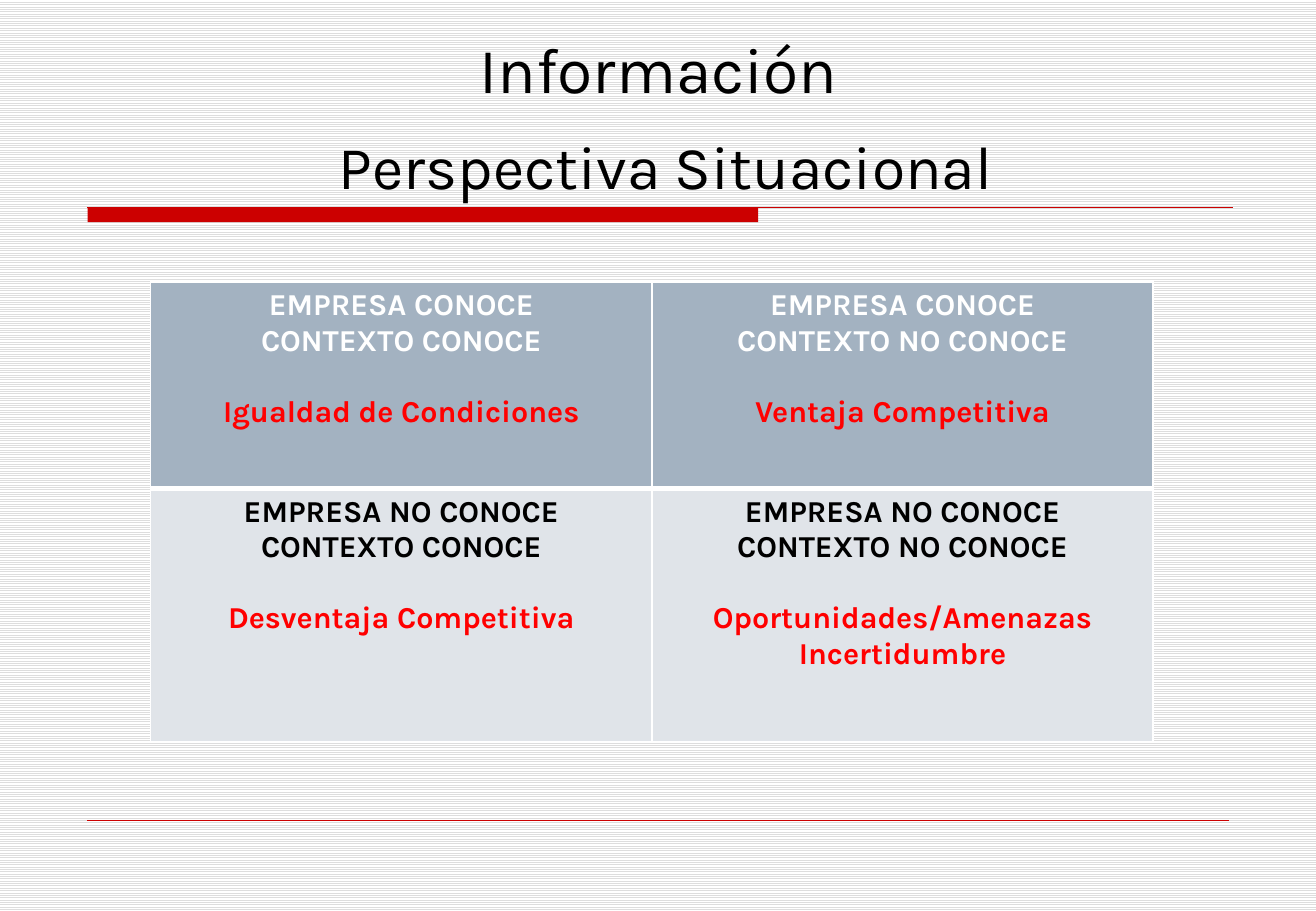
from lxml import etree
from pptx import Presentation
from pptx.dml.color import RGBColor
from pptx.enum import dml, shapes, text
from pptx.oxml import ns
from pptx.util import Inches, Pt

COLORS = {
    "red": "CC0000", "accent": "FF0000", "black": "000000", "white": "FFFFFF",
    "stripe": "DDDDDD", "header": "A3B2C1", "body": "E0E4E9",
}
FONT = "Karla"
QUADRANTS = [
    [(["EMPRESA CONOCE", "CONTEXTO CONOCE"], ["Igualdad de Condiciones"]),
     (["EMPRESA CONOCE", "CONTEXTO NO CONOCE"], ["Ventaja Competitiva"])],
    [(["EMPRESA NO CONOCE", "CONTEXTO CONOCE"], ["Desventaja Competitiva"]),
     (["EMPRESA NO CONOCE", "CONTEXTO NO CONOCE"],
      ["Oportunidades/Amenazas", "Incertidumbre"])],
]
ROW_STYLES = [("header", "white"), ("body", "black")]
ROW_HEIGHTS = [1.7, 2.09]


def rgb(name):
    return RGBColor.from_string(COLORS[name])


def write(frame, content, size, color="black", bold=False, space_before=0):
    """Fill the first empty paragraph of the frame, or append a new one."""
    paragraph = frame.paragraphs[-1]
    if paragraph.runs:
        paragraph = frame.add_paragraph()
    paragraph.alignment = text.PP_ALIGN.CENTER
    paragraph.space_before = Pt(space_before)
    run = paragraph.add_run()
    run.text = content
    run.font.name, run.font.size, run.font.bold = FONT, Pt(size), bold
    run.font.color.rgb = rgb(color)


def add_heading(slide, content, left, top, width, height, size):
    box = slide.shapes.add_textbox(*map(Inches, (left, top, width, height)))
    frame = box.text_frame
    frame.word_wrap = True
    frame.vertical_anchor = text.MSO_ANCHOR.MIDDLE
    write(frame, content, size)


def add_rule(slide, left, top, width, weight):
    line = slide.shapes.add_connector(
        shapes.MSO_CONNECTOR.STRAIGHT, Inches(left), Inches(top),
        Inches(left + width), Inches(top))
    line.line.color.rgb = rgb("red")
    line.line.width = Pt(weight)
    etree.SubElement(line._element.spPr, ns.qn("a:effectLst"))


def add_title_rule(slide, left, top, width, bar_width, bar_height):
    bar = slide.shapes.add_shape(
        shapes.MSO_SHAPE.RECTANGLE,
        *map(Inches, (left, top, bar_width, bar_height)))
    bar.shadow.inherit = False
    bar.fill.solid()
    bar.fill.fore_color.rgb = rgb("red")
    bar.line.fill.background()
    add_rule(slide, left, top, width, 0.75)


def set_borders(cell, widths):
    """Draw white borders, given in points by side: L, R, T, B."""
    properties = cell._tc.get_or_add_tcPr()
    for index, (side, width) in enumerate(widths.items()):
        border = etree.Element(ns.qn(f"a:ln{side}"), w=str(Pt(width)))
        fill = etree.SubElement(border, ns.qn("a:solidFill"))
        etree.SubElement(fill, ns.qn("a:srgbClr"), val=COLORS["white"])
        properties.insert(index, border)


def add_quadrants(slide, left, top, width):
    table = slide.shapes.add_table(
        2, 2, *map(Inches, (left, top, width, sum(ROW_HEIGHTS)))).table
    table.first_row = table.horz_banding = False
    for column in table.columns:
        column.width = Inches(width / 2)
    for row_index, (fill, color) in enumerate(ROW_STYLES):
        table.rows[row_index].height = Inches(ROW_HEIGHTS[row_index])
        for column_index, (conditions, results) in enumerate(QUADRANTS[row_index]):
            cell = table.cell(row_index, column_index)
            cell.fill.solid()
            cell.fill.fore_color.rgb = rgb(fill)
            middle = 3
            set_borders(cell, {"L": 1, "R": 1,
                               "T": middle if row_index == 1 else 1,
                               "B": middle if row_index == 0 else 1})
            for condition in conditions:
                write(cell.text_frame, condition, 18, color, bold=True)
            for index, result in enumerate(results):
                write(cell.text_frame, result, 18, "accent", bold=True,
                      space_before=21 if index == 0 else 0)


def build_slide(presentation):
    slide = presentation.slides.add_slide(presentation.slide_layouts[6])
    background = slide.background.fill
    background.patterned()
    background.pattern = dml.MSO_PATTERN.LIGHT_HORIZONTAL
    background.fore_color.rgb = rgb("stripe")
    background.back_color.rgb = rgb("white")
    add_title_rule(slide, 0.72, 1.71, 9.43, bar_width=5.52, bar_height=0.12)
    add_rule(slide, 0.72, 6.75, 9.39, 0.25)
    add_heading(slide, "Perspectiva Situacional", 1.48, 1.07, 8, 0.58, size=36)
    add_heading(slide, "Información", 0.68, -0.11, 9.48, 1.33, size=38)
    add_quadrants(slide, 1.24, 2.32, 8.25)


def main():
    presentation = Presentation()
    presentation.slide_width = Inches(10.83)
    presentation.slide_height = Inches(7.5)
    build_slide(presentation)
    presentation.save("out.pptx")


if __name__ == "__main__":
    main()
